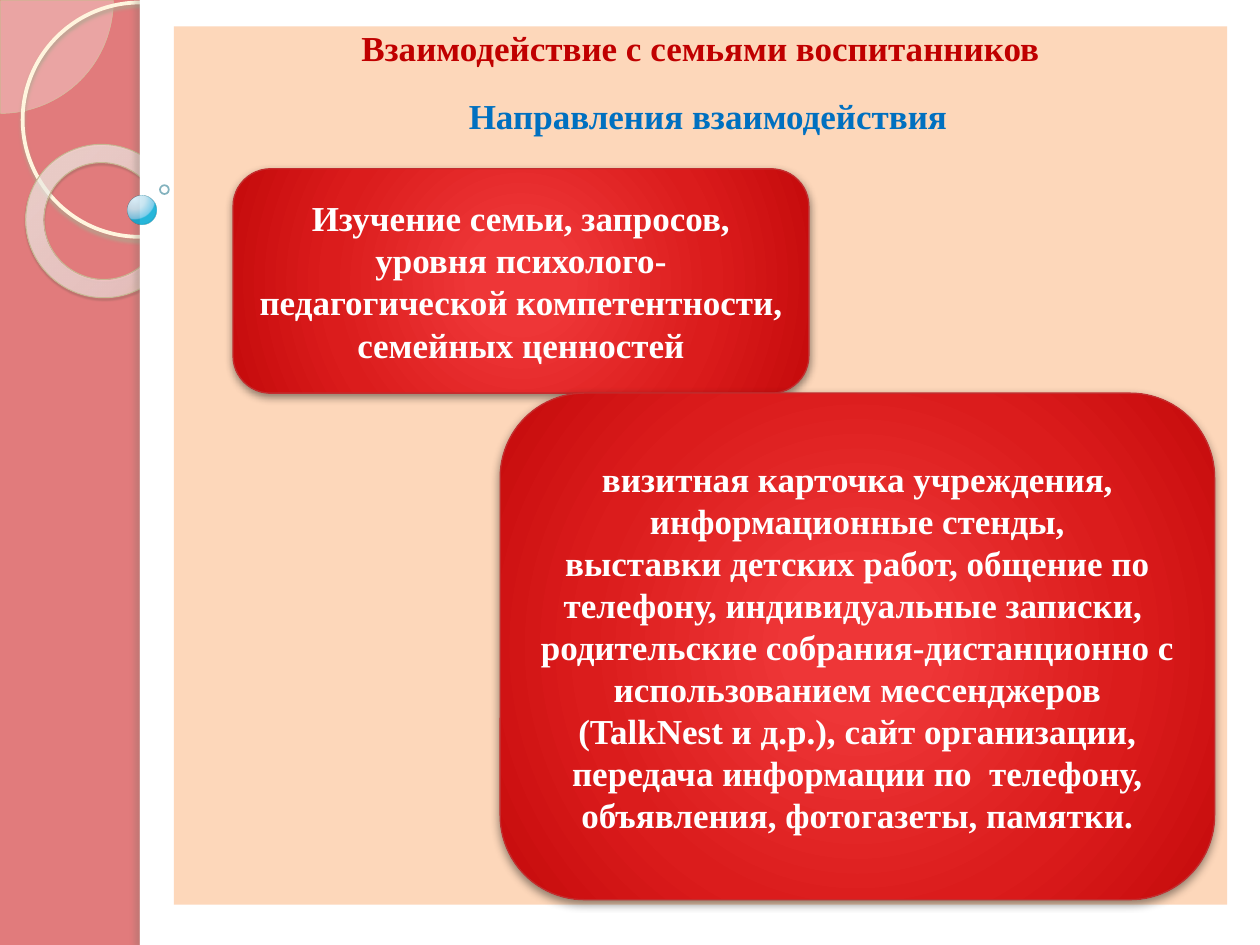
from lxml import etree
from pptx import Presentation
from pptx.dml.color import RGBColor
from pptx.enum.shapes import MSO_SHAPE as Shape
from pptx.enum.text import MSO_ANCHOR as Anchor, PP_ALIGN as Align
from pptx.oxml.ns import qn
from pptx.util import Inches, Pt

FONT = "Times New Roman"
RED_GLOW = [(0, "EF3737", 100), (15, "EE3637", 100), (62, "DB1C1C", 100),
            (97, "C70C0D", 100), (100, "C30001", 100)]
RING_GLOW = [(0, "FFFCF6", 70), (70, "FFFEFB", 55), (100, "F0D28E", 60)]
BEAD_GLOW = [(0, "DAF4FF", 95), (50, "C3E3F0", 90),
             (95, "6BC7E8", 88), (100, "00ABD5", 85)]


def rgb(value):
    return RGBColor.from_string(value)


def add_color(parent, value, alpha):
    color = etree.SubElement(parent, qn("a:srgbClr"), val=value)
    if alpha < 100:
        set_alpha(color, alpha)


def set_alpha(color, alpha):
    etree.SubElement(color, qn("a:alpha"), val=str(alpha * 1000))


def add_shadow(effects, value, alpha, blur, distance, angle):
    shadow = etree.SubElement(
        effects, qn("a:outerShdw"), blurRad=str(Pt(blur)), dist=str(Pt(distance)),
        dir=str(angle * 60000), algn="ctr", rotWithShape="0")
    add_color(shadow, value, alpha)


class SlideBuilder:
    """Holds the text style and the current slide."""

    def __init__(self, slide, font=FONT, size=20):
        self.slide, self.font, self.size = slide, font, size

    def shape(self, kind, left, top, width, height, fill=None, alpha=100,
              line=None, line_width=1, line_alpha=100, shadow=None):
        shape = self.slide.shapes.add_shape(
            kind, Inches(left), Inches(top), Inches(width), Inches(height))
        shape.shadow.inherit = False
        if fill:
            shape.fill.solid()
            shape.fill.fore_color.rgb = rgb(fill)
            if alpha < 100:
                set_alpha(shape.fill._xPr.find(".//" + qn("a:srgbClr")), alpha)
        else:
            shape.fill.background()
        if line:
            shape.line.color.rgb = rgb(line)
            shape.line.width = Pt(line_width)
            if line_alpha < 100:
                set_alpha(shape.line._ln.find(".//" + qn("a:srgbClr")), line_alpha)
        else:
            shape.line.fill.background()
        if shadow:
            add_shadow(shape._element.spPr.find(qn("a:effectLst")), *shadow)
        return shape

    def glow(self, shape, stops, center=(50, 50, 50, 50)):
        """Fill a shape with a round gradient."""
        shape.fill.gradient()
        gradient = shape._element.spPr.find(qn("a:gradFill"))
        gradient.clear()
        stop_list = etree.SubElement(gradient, qn("a:gsLst"))
        for position, value, alpha in stops:
            stop = etree.SubElement(stop_list, qn("a:gs"), pos=str(position * 1000))
            add_color(stop, value, alpha)
        circle = etree.SubElement(gradient, qn("a:path"), path="circle")
        sides = {side: str(part * 1000) for side, part in zip("ltrb", center)}
        etree.SubElement(circle, qn("a:fillToRect"), **sides)

    def text(self, shape, paragraphs, color, anchor=Anchor.MIDDLE):
        frame = shape.text_frame
        frame.text = "\n".join(paragraphs)
        frame.word_wrap = True
        frame.vertical_anchor = anchor
        for paragraph in frame.paragraphs:
            paragraph.alignment = Align.CENTER
            for run in paragraph.runs:
                run.font.name, run.font.size = self.font, Pt(self.size)
                run.font.bold = True
                run.font.color.rgb = rgb(color)

    def heading_panel(self, left, top, width, height, heading):
        """Subtitle placeholder, brought in front of the decoration."""
        panel = self.slide.placeholders[1]
        panel.left, panel.top = Inches(left), Inches(top)
        panel.width, panel.height = Inches(width), Inches(height)
        panel.fill.solid()
        panel.fill.fore_color.rgb = rgb("FDD7BA")
        self.text(panel, [heading], "C00000", Anchor.TOP)
        panel.text_frame.margin_top = 0
        panel.text_frame.paragraphs[0].space_before = Pt(6)
        self.slide.shapes._spTree.append(panel._element)

    def subheading(self, left, top, width, height, heading):
        label = self.shape(Shape.ROUNDED_RECTANGLE, left, top, width, height)
        self.text(label, [heading], "0070C0")
        run = label.text_frame.paragraphs[0].runs[0]
        effects = etree.Element(qn("a:effectLst"))
        run.font._rPr.find(qn("a:solidFill")).addnext(effects)
        add_shadow(effects, "000000", 43, 4, 2, 45)

    def card(self, left, top, width, height, paragraphs):
        card = self.shape(Shape.ROUNDED_RECTANGLE, left, top, width, height,
                          line="C32D2E", line_width=0.75,
                          shadow=("000000", 43, 5, 2, 90))
        self.glow(card, RED_GLOW)
        self.text(card, paragraphs, "FFFFFF")


def main():
    prs = Presentation()
    prs.slide_width, prs.slide_height = Inches(10), Inches(7.5)
    slide = prs.slides.add_slide(prs.slide_layouts[0])
    slide.background.fill.solid()
    slide.background.fill.fore_color.rgb = rgb("E17B7C")
    title = slide.shapes.title._element
    title.getparent().remove(title)
    builder = SlideBuilder(slide)

    # Circles on the left band
    quarter = builder.shape(Shape.PIE, -0.89, -0.89, 1.79, 1.79, "FEFAF4", 33,
                            line="D3C39F", line_width=0.25)
    quarter.adjustments[0], quarter.adjustments[1] = 0, 54
    builder.shape(Shape.OVAL, 0.18, 0.02, 1.86, 1.86, line="FFF5DE",
                  line_width=2.15, shadow=("B0A68F", 85, 2, 2, 90))
    ring = builder.shape(Shape.DONUT, 0.2, 1.15, 1.23, 1.21, line="C7B893",
                         line_width=0.58, shadow=("5A5444", 35, 1, 1.2, 75))
    ring.adjustments[0] = 0.12
    ring.rotation = 38.6
    builder.glow(ring, RING_GLOW, (-408, -50, 508, 150))

    # White page with its shaded edge
    builder.shape(Shape.RECTANGLE, 1.11, 0, 8.89, 7.5, "FFFFFF")
    builder.shape(Shape.RECTANGLE, 1.11, 0, 0.08, 7.5, "FFFFFF",
                  shadow=("736F63", 25, 3, 3, 180))

    # Beads on the edge
    bead = builder.shape(Shape.OVAL, 1.01, 1.55, 0.23, 0.23, line="308EA5",
                         line_width=0.16, line_alpha=60)
    builder.glow(bead, BEAD_GLOW, (25, 12, 75, 88))
    builder.shape(Shape.OVAL, 1.27, 1.47, 0.07, 0.07, line="318093", line_alpha=60)

    # Headings
    builder.heading_panel(1.38, 0.21, 8.36, 6.97,
                          "Взаимодействие с семьями воспитанников")
    builder.subheading(2.34, 0.67, 6.56, 0.49, "Направления взаимодействия")

    # Directions of work with families
    builder.card(1.85, 1.34, 4.57, 1.78, [
        "Изучение семьи, запросов, уровня психолого-педагогической "
        "компетентности, семейных ценностей"])
    builder.card(3.97, 3.12, 5.67, 4.02, [
        "визитная карточка учреждения,",
        "информационные стенды,",
        "выставки детских работ, общение по телефону, индивидуальные записки, ",
        "родительские собрания-дистанционно с использованием мессенджеров "
        "(TalkNest и д.р.), сайт организации,",
        "передача информации по  телефону, объявления, фотогазеты, памятки."])

    prs.save("out.pptx")


if __name__ == "__main__":
    main()
